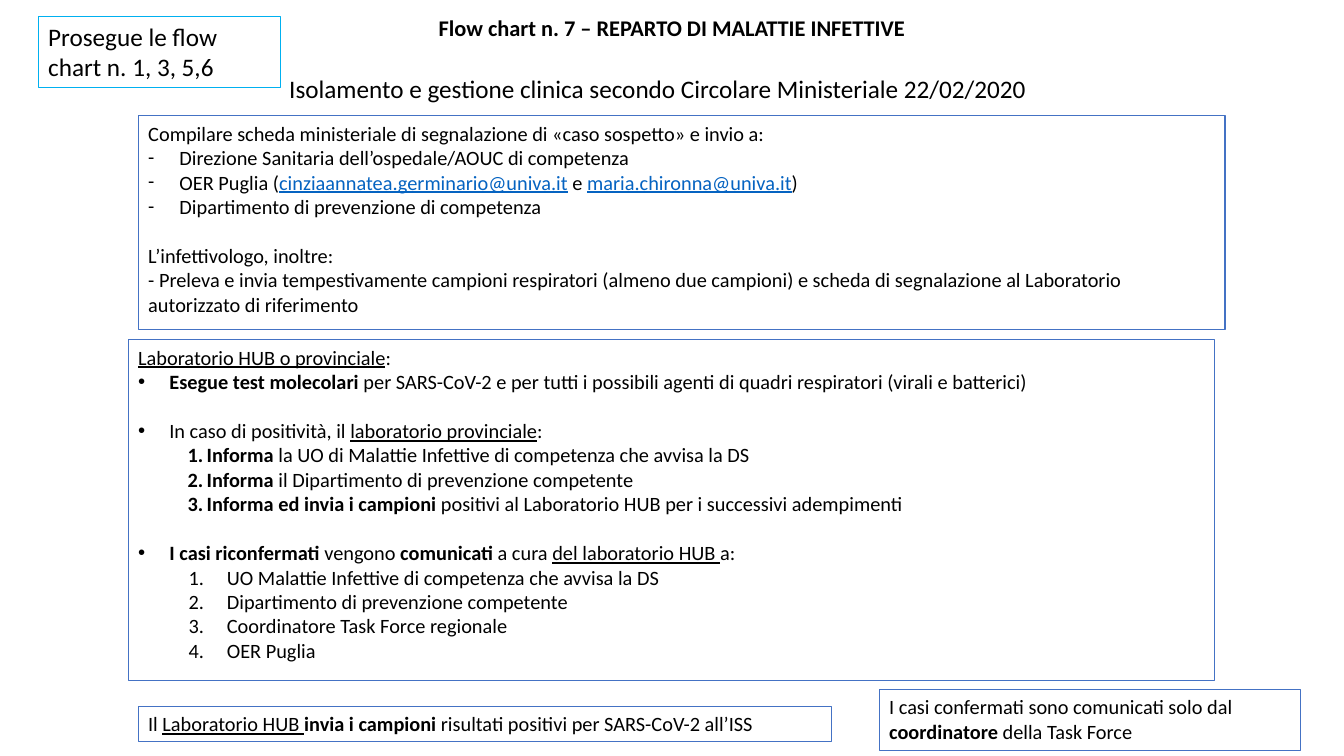
from dataclasses import dataclass
from typing import Optional

from lxml.etree import SubElement
from pptx import Presentation
from pptx.dml.color import RGBColor
from pptx.enum.shapes import MSO_SHAPE
from pptx.enum.text import MSO_ANCHOR, MSO_AUTO_SIZE, PP_ALIGN
from pptx.oxml.ns import qn
from pptx.util import Emu, Pt

PX = 9144  # 100 px to the inch
BLACK = RGBColor(0x00, 0x00, 0x00)
BLUE = RGBColor(0x44, 0x72, 0xC4)
CYAN = RGBColor(0x00, 0xB0, 0xF0)
LINK = RGBColor(0x05, 0x63, 0xC1)
FONT = "Calibri"
BODY_SIZE = 14.5
HEAD_SIZE = 18
GAP = 17.7  # one body line, in points


@dataclass(frozen=True)
class Run:
    text: str
    bold: bool = False
    underline: bool = False
    color: RGBColor = BLACK


@dataclass(frozen=True)
class Bullet:
    margin: int
    hang: int
    char: Optional[str] = None  # None means automatic numbers
    level: int = 0


@dataclass(frozen=True)
class Para:
    runs: tuple[Run, ...]
    bullet: Optional[Bullet] = None
    gap: float = 0


@dataclass(frozen=True)
class Box:
    left: int
    top: int
    width: int
    height: int
    paras: tuple[Para, ...]
    line: Optional[RGBColor] = BLUE
    size: float = BODY_SIZE
    placeholder: Optional[int] = None


DASH = Bullet(31, 31, "-")
DOT = Bullet(31, 31, "•")
STEP = Bullet(68, 19)
RECIPIENT = Bullet(88, 38, level=1)


def para(*runs, bullet: Optional[Bullet] = None, gap: float = 0) -> Para:
    return Para(tuple(Run(r) if isinstance(r, str) else r for r in runs), bullet, gap)


def bold(text: str) -> Run:
    return Run(text, bold=True)


def under(text: str, color: RGBColor = BLACK) -> Run:
    return Run(text, underline=True, color=color)


def px(n: int) -> Emu:
    return Emu(n * PX)


def add_run(p, text: str, *, size: float, bold: bool = False,
            underline: bool = False, color: RGBColor = BLACK) -> None:
    r = p.add_run()
    r.text = text
    r.font.name = FONT
    r.font.size = Pt(size)
    r.font.bold = bold
    r.font.underline = underline
    r.font.color.rgb = color


def set_bullet(p, bullet: Optional[Bullet]) -> None:
    pPr = p._p.get_or_add_pPr()
    pPr.set("marL", str(px(bullet.margin) if bullet else 0))
    pPr.set("indent", str(-px(bullet.hang) if bullet else 0))
    if bullet is None:
        SubElement(pPr, qn("a:buNone"))
    elif bullet.char is None:
        SubElement(pPr, qn("a:buFont"), typeface="+mj-lt")
        SubElement(pPr, qn("a:buAutoNum"), type="arabicPeriod")
    else:
        SubElement(pPr, qn("a:buFont"), typeface="Arial" if bullet.char == "•" else FONT)
        SubElement(pPr, qn("a:buChar"), char=bullet.char)


def place(sp, left: int, top: int, width: int, height: int) -> None:
    sp.left, sp.top, sp.width, sp.height = map(px, (left, top, width, height))


def fill_text(sp, paras: tuple[Para, ...], size: float) -> None:
    tf = sp.text_frame
    tf.word_wrap = True
    tf.auto_size = MSO_AUTO_SIZE.NONE
    tf.vertical_anchor = MSO_ANCHOR.TOP
    for i, item in enumerate(paras):
        p = tf.add_paragraph() if i else tf.paragraphs[0]
        p.alignment = PP_ALIGN.LEFT
        p.level = item.bullet.level if item.bullet else 0
        p.space_before = Pt(item.gap)
        set_bullet(p, item.bullet)
        for run in item.runs:
            add_run(p, run.text, size=size, bold=run.bold,
                    underline=run.underline, color=run.color)


def draw_box(s, box: Box) -> None:
    area = (box.left, box.top, box.width, box.height)
    if box.placeholder is not None:
        sp = s.placeholders[box.placeholder]
        place(sp, *area)
    elif box.line is None:
        sp = s.shapes.add_textbox(*map(px, area))
    else:
        sp = s.shapes.add_shape(MSO_SHAPE.RECTANGLE, *map(px, area))
        sp.shadow.inherit = False
    if box.line is not None:
        sp.fill.background()
        sp.line.color.rgb = box.line
        sp.line.width = Pt(0.75)
    fill_text(sp, box.paras, box.size)


BOXES = (
    # Subtitle
    Box(277, 68, 778, 41, (
        para("Isolamento e gestione clinica secondo Circolare Ministeriale 22/02/2020"),
    ), line=None, size=HEAD_SIZE),
    # Reporting form
    Box(137, 115, 1078, 212, (
        para("Compilare scheda ministeriale di segnalazione di «caso sospetto» e invio a:"),
        para("Direzione Sanitaria dell’ospedale/AOUC di competenza", bullet=DASH),
        para("OER Puglia (", under("cinziaannatea.germinario@univa.it", LINK), " e ",
             under("maria.chironna@univa.it", LINK), ")", bullet=DASH),
        para("Dipartimento di prevenzione di competenza", bullet=DASH),
        para("L’infettivologo, inoltre:", gap=GAP),
        para("- Preleva e invia tempestivamente campioni respiratori (almeno due campioni) "
             "e scheda di segnalazione al Laboratorio autorizzato di riferimento"),
    ), placeholder=1),
    # Laboratory
    Box(127, 337, 1078, 338, (
        para(under("Laboratorio HUB o provinciale"), ":"),
        para(bold("Esegue test molecolari "), "per SARS-CoV-2 e per tutti i possibili agenti "
             "di quadri respiratori (virali e batterici)", bullet=DOT),
        para("In caso di positività, il ", under("laboratorio provinciale"), ":",
             bullet=DOT, gap=GAP),
        para(bold("Informa"), " la UO di Malattie Infettive di competenza che avvisa la DS",
             bullet=STEP),
        para(bold("Informa"), " il Dipartimento di prevenzione competente", bullet=STEP),
        para(bold("Informa ed invia i campioni "),
             "positivi al Laboratorio HUB per i successivi adempimenti", bullet=STEP),
        para(bold("I casi riconfermati "), "vengono ", bold("comunicati"), " a cura ",
             under("del laboratorio HUB "), "a:", bullet=DOT, gap=GAP),
        para("UO Malattie Infettive di competenza che avvisa la DS", bullet=RECIPIENT),
        para("Dipartimento di prevenzione competente", bullet=RECIPIENT),
        para("Coordinatore Task Force regionale", bullet=RECIPIENT),
        para("OER Puglia", bullet=RECIPIENT),
    ), placeholder=2),
    # Link to the previous flow charts
    Box(38, 16, 240, 71, (para("Prosegue le flow chart n. 1, 3, 5,6"),),
        line=CYAN, size=HEAD_SIZE),
    # Closing notes
    Box(137, 701, 688, 35, (
        para("Il ", under("Laboratorio HUB "), bold("invia i campioni "),
             "risultati positivi per SARS-CoV-2 all’ISS"),
    )),
    Box(872, 684, 418, 61, (
        para("I casi confermati sono comunicati solo dal ", bold("coordinatore"),
             " della Task Force"),
    )),
)


def main() -> None:
    prs = Presentation()
    prs.slide_width, prs.slide_height = px(1333), px(750)
    s = prs.slides.add_slide(prs.slide_layouts[3])

    # Title
    title = s.shapes.title
    place(title, 118, 9, 1097, 64)
    fill_text(title, (para(bold("Flow chart n. 7 – REPARTO DI MALATTIE INFETTIVE")),), 16)
    title.text_frame.paragraphs[0].alignment = PP_ALIGN.CENTER

    for box in BOXES:
        draw_box(s, box)
    prs.save("out.pptx")


if __name__ == "__main__":
    main()
